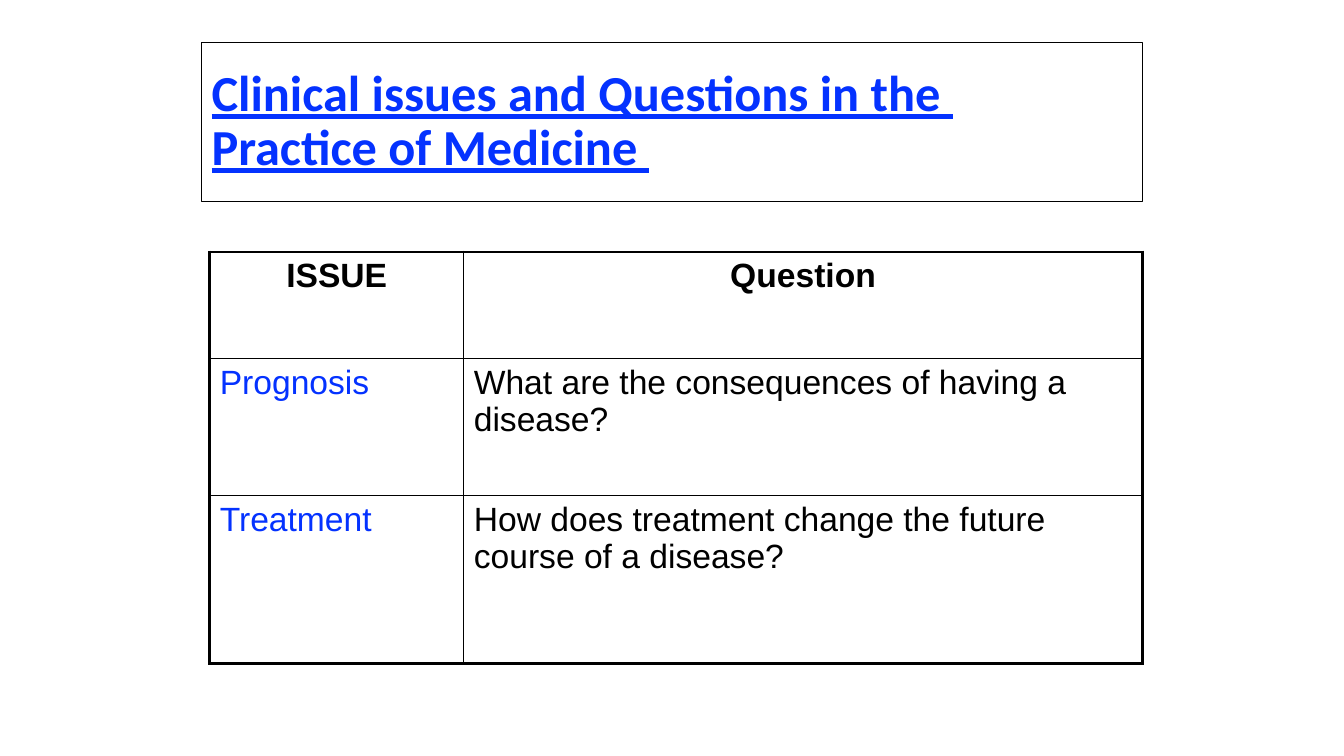
from lxml import etree
from pptx import Presentation
from pptx.dml.color import RGBColor
from pptx.enum.text import MSO_ANCHOR, PP_ALIGN
from pptx.oxml.ns import qn
from pptx.util import Inches, Pt

MIDDLE = MSO_ANCHOR.MIDDLE
CENTER, LEFT = PP_ALIGN.CENTER, PP_ALIGN.LEFT

TITLE = "Clinical issues and Questions in the \vPractice of Medicine "
ISSUES = [
    ("ISSUE", "Question"),
    ("Prognosis", "What are the consequences of having a disease?"),
    ("Treatment", "How does treatment change the future course of a disease?"),
]
COLORS = {"blue": "0432FF", "black": "000000"}
TITLE_BOX = (2, 0.42, 9.33, 1.58)
TABLE_CORNER = (2.08, 2.5)
COLUMN_WIDTHS = (2.52, 6.73)
ROW_HEIGHTS = (1.06, 1.36, 1.66)
OUTER_LINE, INNER_LINE = 2.25, 1


def format_runs(paragraph, font_name, size, color, bold=False, underline=False):
    for run in paragraph.runs:
        font = run.font
        font.name, font.size = font_name, Pt(size)
        font.bold, font.underline = bold, underline
        font.color.rgb = RGBColor.from_string(COLORS[color])


def add_border(cell, position, side, width):
    border = etree.Element(qn(f"a:ln{side}"), w=str(Pt(width)))
    fill = etree.SubElement(border, qn("a:solidFill"))
    etree.SubElement(fill, qn("a:srgbClr"), val=COLORS["black"])
    cell._tc.get_or_add_tcPr().insert(position, border)


def add_title(slide):
    title = slide.shapes.add_textbox(*map(Inches, TITLE_BOX))
    title.line.color.rgb = RGBColor.from_string(COLORS["black"])
    title.line.width = Pt(0.75)
    frame = title.text_frame
    frame.word_wrap = True
    frame.vertical_anchor = MIDDLE
    frame.text = TITLE
    heading = frame.paragraphs[0]
    heading.line_spacing = 0.9
    format_runs(heading, "Calibri", 36, "blue", bold=True, underline=True)


def add_issue_table(slide):
    size = (sum(COLUMN_WIDTHS), sum(ROW_HEIGHTS))
    last_row, last_column = len(ROW_HEIGHTS) - 1, len(COLUMN_WIDTHS) - 1
    table = slide.shapes.add_table(
        last_row + 1, last_column + 1, *map(Inches, TABLE_CORNER + size)
    ).table
    table.horz_banding = False
    for column, width in zip(table.columns, COLUMN_WIDTHS):
        column.width = Inches(width)
    for row, height in zip(table.rows, ROW_HEIGHTS):
        row.height = Inches(height)

    for r, texts in enumerate(ISSUES):
        for c, text in enumerate(texts):
            cell = table.cell(r, c)
            cell.fill.background()
            cell.text_frame.text = text
            paragraph = cell.text_frame.paragraphs[0]
            header = r == 0
            paragraph.alignment = CENTER if header else LEFT
            color = "blue" if c == 0 and not header else "black"
            format_runs(paragraph, "Arial", 24, color, bold=header)
            edges = {"L": c == 0, "R": c == last_column, "T": r == 0, "B": r == last_row}
            for position, (side, outer) in enumerate(edges.items()):
                add_border(cell, position, side, OUTER_LINE if outer else INNER_LINE)


def main():
    deck = Presentation()
    deck.slide_width, deck.slide_height = Inches(13.33), Inches(7.5)
    slide = deck.slides.add_slide(deck.slide_layouts[6])
    add_title(slide)
    add_issue_table(slide)
    deck.save("out.pptx")


if __name__ == "__main__":
    main()
